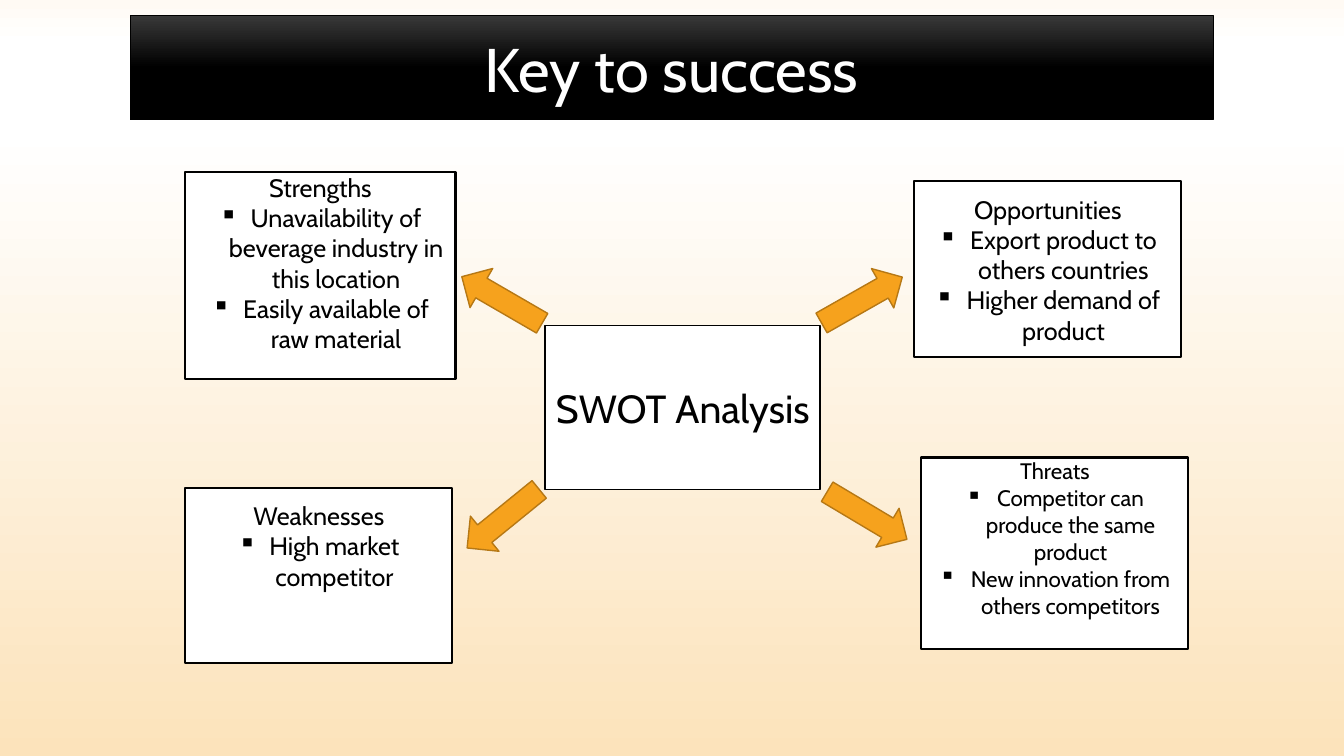
from dataclasses import dataclass

from lxml.etree import SubElement
from pptx import Presentation
from pptx.dml.color import RGBColor
from pptx.enum.shapes import MSO_SHAPE as Shape
from pptx.enum.text import MSO_ANCHOR as Anchor, MSO_AUTO_SIZE as AutoSize, PP_ALIGN as Align
from pptx.oxml.ns import qn
from pptx.util import Cm, Pt

# Content: heading, points, (left, top, width, height) in cm, type size, top inset in cm
TITLE = "Key to success"
CENTRE = "SWOT Analysis"
QUADRANTS = [
    ("Strengths",
     ["Unavailability of beverage industry in this location",
      "Easily available of raw material"],
     (4.67, 4.34, 6.81, 5.21), 18, 0),
    ("Threats",
     ["Competitor can produce the same product",
      "New innovation from others competitors"],
     (23.22, 11.53, 6.73, 4.83), 16, 0),
    ("Opportunities",
     ["Export product to others countries", "Higher demand of product"],
     (23.04, 4.57, 6.73, 4.42), 18, 0.32),
    ("Weaknesses",
     ["High market competitor"],
     (4.67, 12.29, 6.73, 4.42), 18, 0.32),
]
# Arrows: left, top in cm, rotation in degrees
ARROWS = [(11.48, 6.99, 30.1), (20.68, 12.42, 210.8),
          (20.55, 6.99, 150.4), (11.51, 12.5, 320.9)]
ARROW_SIZE = (2.34, 1.14)
TITLE_PLACE = (3.28, 0.38, 27.3, 2.64)
CENTRE_PLACE = (13.74, 8.2, 6.93, 4.14)


@dataclass(frozen=True)
class Theme:
    font: str = "Cabin"
    title_size: int = 44
    centre_size: int = 28
    ink: str = "000000"
    paper: str = "FFFFFF"
    arrow: str = "F6A21D"
    arrow_edge: str = "B67815"
    background: tuple = ((0, "FFFAF4"), (6, "FFFFFF"), (17, "FFFFFF"), (100, "FCE3BB"))
    banner: tuple = ((0, "393939"), (50, "000000"), (100, "000000"))


THEME = Theme()


def color(code):
    return RGBColor.from_string(code)


def place(shape, spot):
    shape.left, shape.top, shape.width, shape.height = map(Cm, spot)


def set_gradient(fill, owner, stops):
    """Fill downwards through any number of (percent, colour) stops."""
    fill.gradient()
    fill.gradient_angle = 270
    stop_list = next(owner.iter(qn("a:gsLst")))
    for old in list(stop_list):
        stop_list.remove(old)
    for percent, code in stops:
        stop = SubElement(stop_list, qn("a:gs"), pos=str(percent * 1000))
        SubElement(stop, qn("a:srgbClr"), val=code)


def set_line(shape, code, width):
    shape.line.color.rgb = color(code)
    shape.line.width = Pt(width)


def add_block(slide, kind, spot, fill, edge, width):
    shape = slide.shapes.add_shape(kind, *map(Cm, spot))
    shape.shadow.inherit = False
    shape.fill.solid()
    shape.fill.fore_color.rgb = color(fill)
    set_line(shape, edge, width)
    return shape


def set_frame(shape, anchor, top=0.13, side=0.25):
    frame = shape.text_frame
    frame.word_wrap = True
    frame.auto_size = AutoSize.NONE
    frame.vertical_anchor = anchor
    frame.margin_left = frame.margin_right = Cm(side)
    frame.margin_top, frame.margin_bottom = Cm(top), Cm(0.13)
    return frame


def write(para, text, size, code):
    para.alignment = Align.CENTER
    span = para.add_run()
    span.text = text
    span.font.name = THEME.font
    span.font.size = Pt(size)
    span.font.color.rgb = color(code)


def add_bullet(para):
    props = para._p.get_or_add_pPr()
    props.set("marL", str(Cm(0.79)))
    props.set("indent", str(Cm(-0.79)))
    SubElement(props, qn("a:buChar"), char="▪")


def main():
    deck = Presentation()
    deck.slide_width, deck.slide_height = Cm(33.87), Cm(19.05)
    slide = deck.slides.add_slide(deck.slide_layouts[5])
    set_gradient(slide.background.fill, slide.background._cSld, THEME.background)

    # Title banner
    title = slide.shapes.title
    place(title, TITLE_PLACE)
    set_gradient(title.fill, title.element, THEME.banner)
    set_line(title, THEME.ink, 0.5)
    frame = set_frame(title, Anchor.MIDDLE)
    write(frame.paragraphs[0], TITLE, THEME.title_size, THEME.paper)

    # Centre box
    box = add_block(slide, Shape.RECTANGLE, CENTRE_PLACE, THEME.paper, THEME.ink, 1)
    frame = set_frame(box, Anchor.MIDDLE, side=0)
    write(frame.paragraphs[0], CENTRE, THEME.centre_size, THEME.ink)

    # Arrows pointing out to the quadrants
    for left, top, angle in ARROWS:
        arrow = add_block(slide, Shape.LEFT_ARROW, (left, top, *ARROW_SIZE),
                          THEME.arrow, THEME.arrow_edge, 1)
        arrow.rotation = angle

    # Quadrant boxes
    for heading, points, spot, size, inset in QUADRANTS:
        box = add_block(slide, Shape.RECTANGLE, spot, THEME.paper, THEME.ink, 1.5)
        frame = set_frame(box, Anchor.TOP, top=inset)
        write(frame.paragraphs[0], heading, size, THEME.ink)
        for point in points:
            para = frame.add_paragraph()
            write(para, point, size, THEME.ink)
            add_bullet(para)

    deck.save("out.pptx")


if __name__ == "__main__":
    main()
